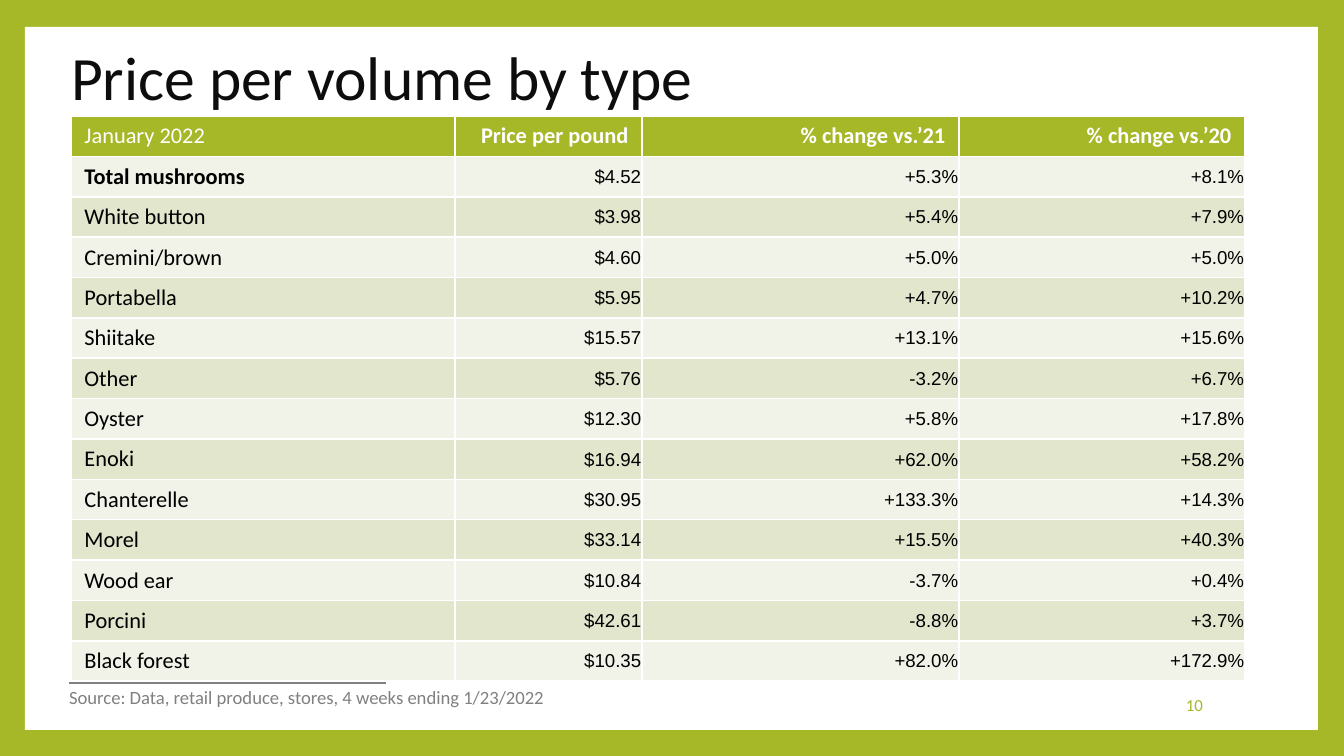
import pptx
import pptx.dml.color
import pptx.enum.shapes
import pptx.enum.text
import pptx.oxml
import pptx.oxml.ns
import pptx.util
from dataclasses import dataclass

ALIGN = pptx.enum.text.PP_ALIGN
ANCHOR = pptx.enum.text.MSO_ANCHOR


@dataclass(frozen=True)
class Theme:
    green: str = "A6B727"
    white: str = "FFFFFF"
    black: str = "000000"
    ink: str = "0D0D0D"
    gray: str = "808080"
    light_band: str = "F1F3E8"
    dark_band: str = "E1E6CD"
    font: str = "Calibri"
    value_font: str = "Arial"
    title_size: int = 33
    label_size: int = 12
    value_size: int = 10
    source_size: int = 10
    number_size: int = 9


def px(length):
    return pptx.util.Emu(round(length * 914400 / 134.4))


def rgb(color):
    return pptx.dml.color.RGBColor.from_string(color)


class SlideBuilder:
    def __init__(self, page, theme):
        self.page = page
        self.theme = theme

    def background(self, color):
        fill = self.page.background.fill
        fill.solid()
        fill.fore_color.rgb = rgb(color)

    def panel(self, left, top, width, height, color):
        panel = self.page.shapes.add_shape(
            pptx.enum.shapes.MSO_SHAPE.RECTANGLE,
            px(left), px(top), px(width), px(height))
        panel.shadow.inherit = False
        panel.fill.solid()
        panel.fill.fore_color.rgb = rgb(color)
        panel.line.fill.background()

    def style(self, para, size, color, font=None, bold=False, align=ALIGN.LEFT):
        para.alignment = align
        para.font.size = pptx.util.Pt(size)
        para.font.name = font or self.theme.font
        para.font.bold = bold
        para.font.color.rgb = rgb(color)

    def text(self, left, top, width, height, words, size, color,
             align=ALIGN.LEFT, anchor=ANCHOR.TOP, wrap=True, spacing=None):
        box = self.page.shapes.add_textbox(px(left), px(top), px(width), px(height))
        frame = box.text_frame
        frame.word_wrap = wrap
        frame.vertical_anchor = anchor
        para = frame.paragraphs[0]
        para.text = words
        para.line_spacing = spacing
        self.style(para, size, color, align=align)

    def line(self, left, top, right, bottom, color, weight):
        line = self.page.shapes.add_connector(
            pptx.enum.shapes.MSO_CONNECTOR.STRAIGHT,
            px(left), px(top), px(right), px(bottom))
        line.line.color.rgb = rgb(color)
        line.line.width = pptx.util.Pt(weight)
        line._element.spPr.append(pptx.oxml.parse_xml(
            f"<a:effectLst {pptx.oxml.ns.nsdecls('a')}/>"))

    def cell(self, cell, words, fill, **style):
        properties = cell._tc.get_or_add_tcPr()
        for side in ("lnL", "lnR", "lnT", "lnB"):
            properties.append(pptx.oxml.parse_xml(
                f'<a:{side} {pptx.oxml.ns.nsdecls("a")} w="12700"><a:solidFill>'
                f'<a:srgbClr val="{self.theme.white}"/></a:solidFill></a:{side}>'))
        cell.fill.solid()
        cell.fill.fore_color.rgb = rgb(fill)
        para = cell.text_frame.paragraphs[0]
        para.text = words
        self.style(para, **style)

    def table(self, left, top, widths, row_height, rows):
        theme = self.theme
        table = self.page.shapes.add_table(
            len(rows), len(widths), px(left), px(top),
            px(sum(widths)), px(row_height * len(rows))).table
        table.horz_banding = False
        for column, width in zip(table.columns, widths):
            column.width = px(width)
        for row_index, row in enumerate(rows):
            table.rows[row_index].height = px(row_height)
            band = theme.light_band if row_index % 2 else theme.dark_band
            for column_index, words in enumerate(row):
                cell = table.cell(row_index, column_index)
                align = ALIGN.RIGHT if column_index else ALIGN.LEFT
                if row_index == 0:
                    self.cell(cell, words, theme.green, size=theme.label_size,
                              color=theme.white, bold=column_index > 0, align=align)
                elif column_index == 0:
                    self.cell(cell, words, band, size=theme.label_size,
                              color=theme.black, bold=row_index == 1)
                else:
                    cell.margin_left = cell.margin_right = cell.margin_top = px(1)
                    cell.margin_bottom = 0
                    cell.vertical_anchor = ANCHOR.MIDDLE
                    self.cell(cell, words, band, size=theme.value_size,
                              color=theme.black, font=theme.value_font, align=align)


PRICES = [
    ("January 2022", "Price per pound", "% change vs.’21", "% change vs.’20"),
    ("Total mushrooms", "$4.52", "+5.3%", "+8.1%"),
    ("White button", "$3.98", "+5.4%", "+7.9%"),
    ("Cremini/brown", "$4.60", "+5.0%", "+5.0%"),
    ("Portabella", "$5.95", "+4.7%", "+10.2%"),
    ("Shiitake", "$15.57", "+13.1%", "+15.6%"),
    ("Other", "$5.76", "-3.2%", "+6.7%"),
    ("Oyster", "$12.30", "+5.8%", "+17.8%"),
    ("Enoki", "$16.94", "+62.0%", "+58.2%"),
    ("Chanterelle", "$30.95", "+133.3%", "+14.3%"),
    ("Morel", "$33.14", "+15.5%", "+40.3%"),
    ("Wood ear", "$10.84", "-3.7%", "+0.4%"),
    ("Porcini", "$42.61", "-8.8%", "+3.7%"),
    ("Black forest", "$10.35", "+82.0%", "+172.9%"),
]


def main():
    deck = pptx.Presentation()
    deck.slide_width, deck.slide_height = px(1344), px(756)
    theme = Theme()
    slide = SlideBuilder(deck.slides.add_slide(deck.slide_layouts[6]), theme)

    # Green frame around a white panel
    slide.background(theme.green)
    slide.panel(25, 27, 1293, 703, theme.white)

    # Title and page number
    slide.text(58, 28, 1146, 106, "Price per volume by type", theme.title_size,
               theme.ink, anchor=ANCHOR.MIDDLE, spacing=0.9)
    slide.text(1028, 685, 188, 40, "10", theme.number_size, theme.green,
               align=ALIGN.RIGHT, anchor=ANCHOR.MIDDLE)

    # Price table over the source rule
    slide.line(69, 683, 386, 683, theme.gray, 0.79)
    slide.table(71, 116, (384, 187, 317, 286), 40, PRICES)

    # Source note
    slide.text(56, 679, 516, 36,
               "Source: Data, retail produce, stores, 4 weeks ending 1/23/2022",
               theme.source_size, theme.gray, wrap=False)

    deck.save("out.pptx")


if __name__ == "__main__":
    main()
